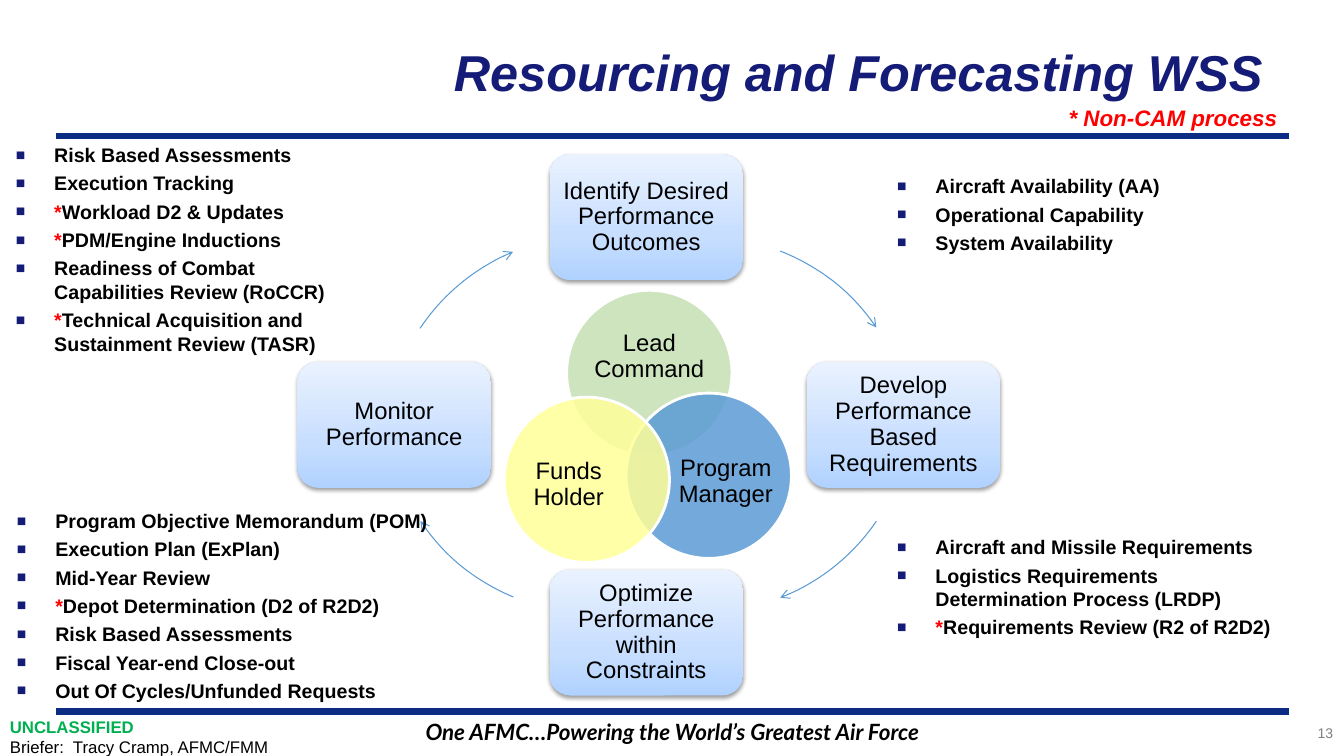
from pptx import Presentation
from pptx.dml.color import RGBColor as RGB
from pptx.enum.shapes import MSO_CONNECTOR as LINE, MSO_SHAPE as SHAPE
from pptx.enum.text import MSO_ANCHOR as ANCHOR, MSO_AUTO_SIZE as FIT, PP_ALIGN as ALIGN
from pptx.oxml import parse_xml
from pptx.oxml.ns import nsdecls, qn
from pptx.util import Pt

PX = 9144  # 100 px to the inch
C = dict(navy="151C77", rule="0C2D83", black="000000", red="FF0000", green="00B050",
         grey="808080", white="FFFFFF", arrow="5B9BD5", lead="C5E0B4",
         manager="5B9BD5", funds="FFFF99")
NODE_STOPS = [(0, "B0D2FF"), (35, "C7DEFF"), (100, "EAF2FF")]
NS = nsdecls("a")


def px(*lengths):
    return [n * PX for n in lengths]


def write(sp, lines, size, color="black", align=ALIGN.LEFT, inset=(10, 5, 10, 5),
          anchor=ANCHOR.TOP, wrap=True, spacing=None, bullet=False, **font):
    """Fill a shape with one paragraph per line; a leading * on a bullet is red."""
    tf = sp.text_frame
    left, top, right, bottom = px(*inset)
    box = dict(margin_left=left, margin_top=top, margin_right=right, margin_bottom=bottom,
               vertical_anchor=anchor, word_wrap=wrap, auto_size=FIT.NONE)
    for name, value in box.items():
        setattr(tf, name, value)
    for i, line in enumerate(lines):
        p = tf.paragraphs[0] if i == 0 else tf.add_paragraph()
        p.alignment, p.line_spacing = align, spacing
        p.space_before = Pt(3.4 if bullet and i else 0)
        runs = [(line, color)]
        if bullet:
            pPr = p._p.get_or_add_pPr()
            pPr.set("marL", str(38 * PX))
            pPr.set("indent", str(-38 * PX))
            for xml in (f'<a:buClr {NS}><a:srgbClr val="{C["navy"]}"/></a:buClr>',
                        f'<a:buSzPct {NS} val="80000"/>',
                        f'<a:buFont {NS} typeface="Arial"/>',
                        f'<a:buChar {NS} char="■"/>'):
                pPr.append(parse_xml(xml))
            if line.startswith("*"):
                runs = [("*", "red"), (line[1:], color)]
        for text, run_color in runs:
            r = p.add_run()
            r.text = text
            r.font.color.rgb = RGB.from_string(C[run_color])
            for name, value in {"name": "Arial", "size": Pt(size), **font}.items():
                setattr(r.font, name, value)


prs = Presentation()
prs.slide_width, prs.slide_height = px(1333, 750)
s = prs.slides.add_slide(prs.slide_layouts[5])
shapes = s.shapes

# Title and frame
title = shapes.title
title.left, title.top, title.width, title.height = px(236, 8, 1042, 125)
write(title, ["Resourcing and Forecasting WSS"], 36, "navy", ALIGN.RIGHT, (10, 5, 25, 5),
      ANCHOR.MIDDLE, bold=True, italic=True)

for y in (706, 135):
    rule = shapes.add_connector(LINE.STRAIGHT, *px(56, y, 1278, y))
    rule.line.color.rgb = RGB.from_string(C["rule"])
    rule.line.width = Pt(4.5)
    rule._element.spPr.append(parse_xml(f"<a:effectLst {NS}/>"))

motto = shapes.add_textbox(*px(56, 708, 1222, 37))
write(motto, ["One AFMC…Powering the World’s Greatest Air Force"], 16, align=ALIGN.CENTER,
      name="Lato", bold=True, italic=True)

# Cycle of four steps, each followed by its arrow: box corner, start and end angle
steps = [
    ("Identify Desired Performance Outcomes", 545, 153, (493, 235), (291.3, 325.7)),
    ("Develop Performance Based Requirements", 800, 359, (493, 195), (34.3, 68.7)),
    ("Optimize Performance within Constraints", 545, 565, (382, 196), (112.5, 146.1)),
    ("Monitor Performance", 295, 359, (382, 234), (213.7, 247.4)),
]
stops = "".join(f'<a:gs pos="{pos * 1000}"><a:srgbClr val="{color}"/></a:gs>'
                for pos, color in NODE_STOPS)
for text, x, y, corner, angles in steps:
    node = shapes.add_shape(SHAPE.ROUNDED_RECTANGLE, *px(x, y, 192, 125))
    node.line.fill.background()
    node.fill.background()
    node.shadow.inherit = False
    spPr = node._element.spPr
    spPr.replace(spPr.find(qn("a:noFill")), parse_xml(
        f'<a:gradFill {NS} rotWithShape="1"><a:gsLst>{stops}</a:gsLst>'
        '<a:lin ang="16200000" scaled="0"/></a:gradFill>'))
    spPr.find(qn("a:effectLst")).append(parse_xml(
        f'<a:outerShdw {NS} blurRad="{Pt(3.1)}" dist="{Pt(1.6)}" dir="5400000" '
        f'rotWithShape="0"><a:srgbClr val="{C["black"]}"><a:alpha val="38000"/>'
        '</a:srgbClr></a:outerShdw>'))
    write(node, [text], 17, align=ALIGN.CENTER, inset=(7, 7, 7, 7), anchor=ANCHOR.MIDDLE,
          spacing=0.9)

    arc = shapes.add_shape(SHAPE.ARC, *px(*corner, 412, 412))
    arc.fill.background()
    arc.shadow.inherit = False
    arc.line.color.rgb = RGB.from_string(C["arrow"])
    arc.line.width = Pt(0.75)
    for i, angle in enumerate(angles):
        arc.adjustments[i] = angle * 0.6  # 60000ths of a degree over 100000
    arc.line._get_or_add_ln().append(parse_xml(f'<a:tailEnd {NS} type="arrow"/>'))

# Overlapping circles: corner, then label box
circles = [
    ("Lead Command", "lead", (562, 288), (584, 317, 120, 74)),
    ("Program Manager", "manager", (621, 390), (671, 433, 98, 90)),
    ("Funds Holder", "funds", (500, 394), (515, 436, 98, 90)),
]
for text, color, corner, label_box in circles:
    circle = shapes.add_shape(SHAPE.OVAL, *px(*corner, 164, 164))
    circle.shadow.inherit = False
    circle.fill.solid()
    circle.fill.fore_color.rgb = RGB.from_string(C[color])
    circle._element.spPr.find(qn("a:solidFill"))[0].append(
        parse_xml(f'<a:alpha {NS} val="85000"/>'))
    circle.line.color.rgb = RGB.from_string(C["white"])
    circle.line.width = Pt(2)
    label = shapes.add_textbox(*px(*label_box))
    write(label, [text], 17, align=ALIGN.CENTER, inset=(0, 0, 0, 0), anchor=ANCHOR.MIDDLE,
          spacing=0.9)

# Bulleted lists in the corners
lists = [
    ((880, 168, 371, 90), True,
     ["Aircraft Availability (AA)", "Operational Capability", "System Availability"]),
    ((880, 526, 395, 114), True,
     ["Aircraft and Missile Requirements",
      "Logistics Requirements Determination Process (LRDP)",
      "*Requirements Review (R2 of R2D2)"]),
    ((7, 500, 429, 232), False,
     ["Program Objective Memorandum (POM)", "Execution Plan (ExPlan)", "Mid-Year Review",
      "*Depot Determination (D2 of R2D2)", "Risk Based Assessments",
      "Fiscal Year-end Close-out", "Out Of Cycles/Unfunded Requests"]),
    ((6, 137, 360, 250), True,
     ["Risk Based Assessments", "Execution Tracking", "*Workload D2 & Updates",
      "*PDM/Engine Inductions", "Readiness of Combat Capabilities Review (RoCCR)",
      "*Technical Acquisition and Sustainment Review (TASR)"]),
]
for box, wrap, lines in lists:
    write(shapes.add_textbox(*px(*box)), lines, 14, wrap=wrap, bullet=True, bold=True)

# Key, classification and page number
key = shapes.add_textbox(*px(1050, 98, 230, 37))
write(key, ["* Non-CAM process"], 16, "red", wrap=False, bold=True, italic=True)

marking = shapes.add_textbox(*px(0, 706, 353, 44))
write(marking, ["UNCLASSIFIED", "Briefer:  Tracy Cramp, AFMC/FMM"], 12)
heading = marking.text_frame.paragraphs[0].runs[0].font
heading.bold = True
heading.color.rgb = RGB.from_string(C["green"])

page = shapes.add_textbox(*px(1165, 714, 167, 33))
write(page, ["13"], 10, "grey", ALIGN.RIGHT)

prs.save("out.pptx")
